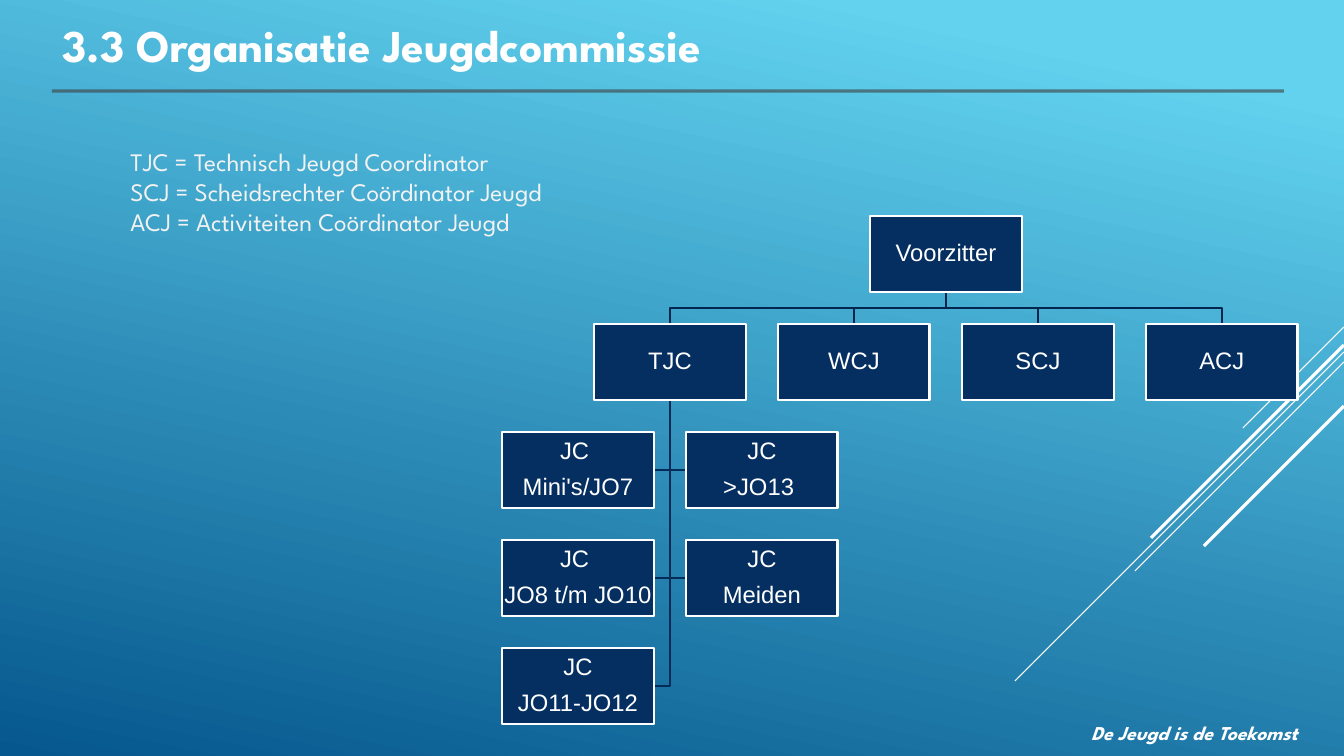
from lxml.etree import SubElement
from pptx import Presentation
from pptx.dml.color import RGBColor
from pptx.enum.shapes import MSO_CONNECTOR, MSO_SHAPE
from pptx.enum.text import MSO_ANCHOR, MSO_AUTO_SIZE, PP_ALIGN
from pptx.oxml.ns import qn
from pptx.util import Inches, Pt

PX = Inches(1) / 100.8
BOX_W, BOX_H = 152, 76
LEFT, TOP, STEP_X, STEP_Y = 502, 216, 92, 108
GAP = 16


def rgb(value):
    return RGBColor.from_string(value)


def write(sp, lines, color, font, para, frame):
    tf = sp.text_frame
    for name, value in frame.items():
        setattr(tf, name, value)
    for i, line in enumerate(lines):
        p = tf.paragraphs[0] if i == 0 else tf.add_paragraph()
        for name, value in para.items():
            setattr(p, name, value)
        r = p.add_run()
        r.text = line
        for name, value in font.items():
            setattr(r.font, name, value)
        r.font.color.rgb = rgb(color)


prs = Presentation()
prs.slide_width = round(1344 * PX)
prs.slide_height = round(756 * PX)
s = prs.slides.add_slide(prs.slide_layouts[1])

bg = s.background.fill
bg.gradient()
bg.gradient_angle = 258
for stop, (position, color) in zip(bg.gradient_stops, [(0.1, "62D2EF"), (1, "05578D")]):
    stop.position = position
    stop.color.rgb = rgb(color)

rules = [
    (1344, 327, 1243, 428, "FFFFFF", 0.75),
    (1344, 352, 1015, 681, "FFFFFF", 0.75),
    (1344, 362, 1135, 571, "FFFFFF", 0.75),
    (1344, 345, 1151, 538, "FFFFFF", 2.25),
    (1344, 406, 1204, 546, "FFFFFF", 2.25),
    (52, 91, 1284, 91, "3F3F3F", 2.25),
]
for *ends, color, width in rules:
    rule = s.shapes.add_connector(MSO_CONNECTOR.STRAIGHT, *[round(v * PX) for v in ends])
    rule.line.color.rgb = rgb(color)
    rule.line.width = Pt(width)
    SubElement(rule._element.spPr, qn("a:effectLst"))
title_rule_color = rule.line._ln.find(qn("a:solidFill"))[0]
SubElement(title_rule_color, qn("a:alpha"), val="60000")

title, body = s.placeholders
footer = s.shapes.add_textbox(0, 0, 0, 0)
places = [(title, 52, 16, 1124, 57), (body, 70, 141, 657, 540), (footer, 1045, 716, 299, 40)]
for sp, *place in places:
    sp.left, sp.top, sp.width, sp.height = [round(v * PX) for v in place]

frame = {"word_wrap": True, "auto_size": MSO_AUTO_SIZE.NONE}
write(title, ["3.3 Organisatie Jeugdcommissie"], "FFFFFF",
      {"name": "League Spartan", "size": Pt(32.4), "bold": True},
      {"alignment": PP_ALIGN.LEFT}, {**frame, "vertical_anchor": MSO_ANCHOR.MIDDLE})
write(footer, ["De Jeugd is de Toekomst"], "FFFFFF",
      {"name": "League Spartan", "size": Pt(14), "bold": True, "italic": True},
      {"alignment": PP_ALIGN.CENTER}, frame)
write(body, [
    "TJC = Technisch Jeugd Coordinator",
    "SCJ = Scheidsrechter Coördinator Jeugd",
    "ACJ = Activiteiten Coördinator Jeugd",
], "F2F2F2", {"name": "League Spartan", "size": Pt(18)}, {"space_before": Pt(0)}, frame)
for p in body.text_frame.paragraphs:
    pPr = p._p.get_or_add_pPr()
    pPr.set("marL", str(Inches(0.5)))
    pPr.set("indent", "0")
    SubElement(pPr, qn("a:buNone"))

boxes = [
    (4, 0, ["Voorzitter"]),
    (1, 1, ["TJC"]),
    (3, 1, ["WCJ"]),
    (5, 1, ["SCJ"]),
    (7, 1, ["ACJ"]),
    (0, 2, ["JC ", "Mini's/JO7"]),
    (2, 2, ["JC", ">JO13 "]),
    (0, 3, ["JC ", "JO8 t/m JO10"]),
    (2, 3, ["JC", "Meiden"]),
    (0, 4, ["JC", "JO11-JO12"]),
]
chair_x = LEFT + 4 * STEP_X + BOX_W // 2
tjc_x = LEFT + STEP_X + BOX_W // 2
for col, row, lines in boxes[1:]:
    x, y = LEFT + col * STEP_X, TOP + row * STEP_Y
    if row == 1:
        center, bar = x + BOX_W // 2, y - GAP
        color = "04264E"
        points = [(chair_x, TOP + BOX_H), (chair_x, bar), (center, bar), (center, y)]
    else:
        middle = y + BOX_H // 2
        color = "052B58"
        edge = x + BOX_W if col == 0 else x
        points = [(tjc_x, TOP + STEP_Y + BOX_H), (tjc_x, middle), (edge, middle)]
    fb = s.shapes.build_freeform(*points[0], scale=PX)
    fb.add_line_segments(points[1:], close=False)
    branch = fb.convert_to_shape()
    branch.shadow.inherit = False
    branch.fill.background()
    branch.line.color.rgb = rgb(color)
    branch.line.width = Pt(2)

inset = round(PX)
box_frame = {"word_wrap": True, "vertical_anchor": MSO_ANCHOR.MIDDLE, "margin_left": inset,
             "margin_right": inset, "margin_top": inset, "margin_bottom": inset}
box_para = {"alignment": PP_ALIGN.CENTER, "line_spacing": 0.9, "space_after": Pt(7)}
for col, row, lines in boxes:
    place = LEFT + col * STEP_X, TOP + row * STEP_Y, BOX_W, BOX_H
    sp = s.shapes.add_shape(MSO_SHAPE.RECTANGLE, *[round(v * PX) for v in place])
    sp.shadow.inherit = False
    sp.fill.solid()
    sp.fill.fore_color.rgb = rgb("052F61")
    sp.line.color.rgb = rgb("FFFFFF")
    sp.line.width = Pt(2)
    write(sp, lines, "FFFFFF", {"name": "Arial", "size": Pt(17)}, box_para, box_frame)

prs.save("out.pptx")
